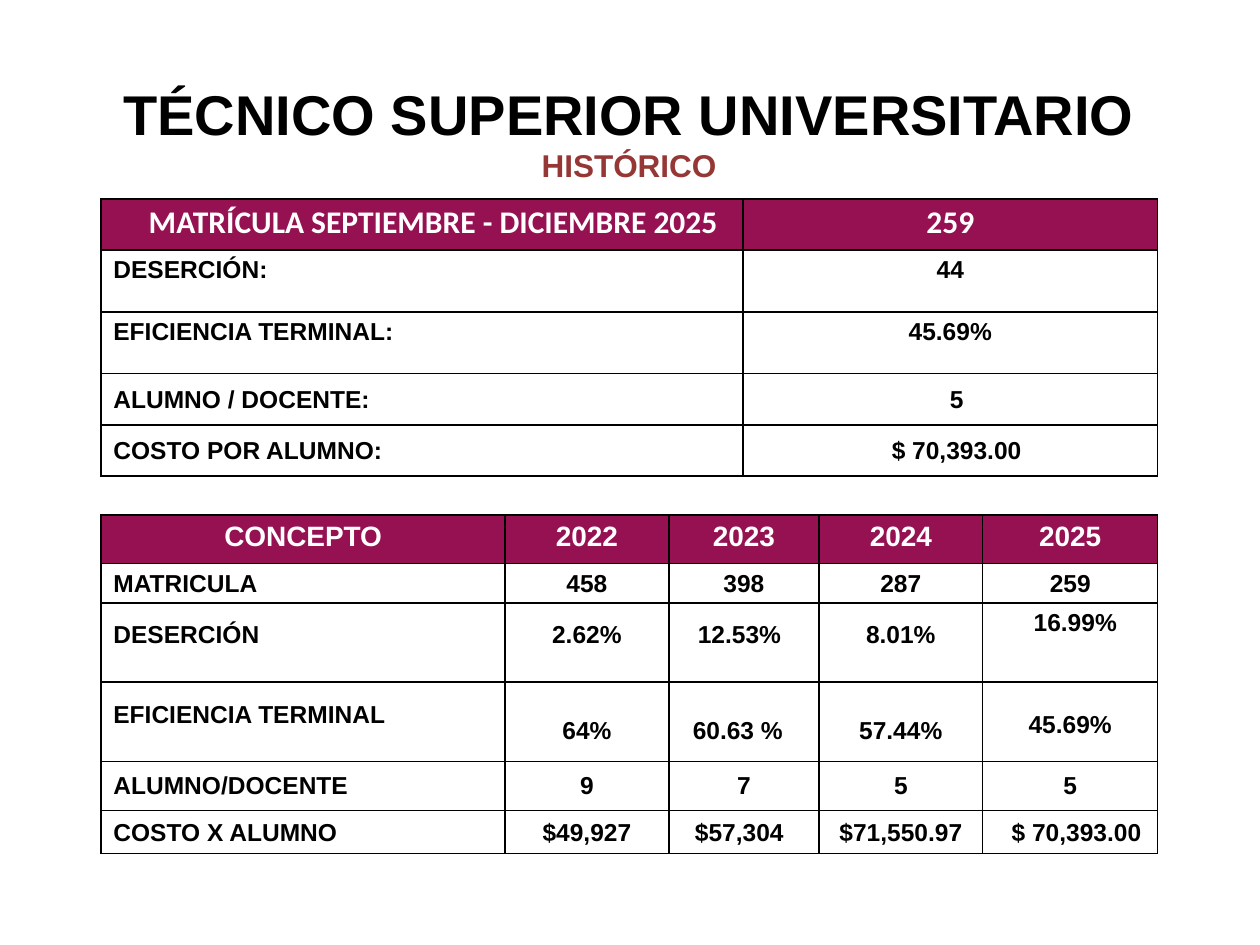
"""Build the slide with the history of the Técnico Superior Universitario indicators."""
from dataclasses import dataclass
from typing import Any

from lxml.etree import SubElement
from pptx import Presentation
from pptx.dml.color import RGBColor
from pptx.enum.text import MSO_ANCHOR as Anchor, MSO_AUTO_SIZE as AutoSize, PP_ALIGN as Align
from pptx.oxml.ns import qn
from pptx.util import Pt

BLACK = RGBColor(0x00, 0x00, 0x00)
WHITE = RGBColor(0xFF, 0xFF, 0xFF)
WINE = RGBColor(0x95, 0x11, 0x51)
BRICK = RGBColor(0x95, 0x37, 0x35)

SUMMARY = [
    ["MATRÍCULA SEPTIEMBRE - DICIEMBRE 2025", "259"],
    ["DESERCIÓN:", "44"],
    ["EFICIENCIA TERMINAL:", "45.69%"],
    ["ALUMNO / DOCENTE:", "5"],
    ["COSTO POR ALUMNO:", "$ 70,393.00"],
]
HISTORY = [
    ["CONCEPTO", "2022", "2023", "2024", "2025"],
    ["MATRICULA", "458", "398", "287", "259"],
    ["DESERCIÓN", "2.62%", "12.53%", "8.01%", "16.99%"],
    ["EFICIENCIA TERMINAL", "64%", "60.63 %", "57.44%", "45.69%"],
    ["ALUMNO/DOCENTE", "9", "7", "5", "5"],
    ["COSTO X ALUMNO", "$49,927", "$57,304", "$71,550.97", "$ 70,393.00"],
]


def write(para, text, size=14, color=BLACK, font="Arial", align=Align.CENTER, line=None):
    """Add bold text to a paragraph with the given format."""
    para.alignment = align
    if line:
        para.line_spacing = Pt(line)
    span = para.add_run()
    span.text = text
    span.font.size = Pt(size)
    span.font.bold = True
    span.font.name = font
    span.font.color.rgb = color


@dataclass
class SlideBuilder:
    """Hold the page and the shared table style."""
    page: Any
    header_fill: RGBColor = WINE
    border: RGBColor = BLACK
    border_width: float = 1
    label_indent: float = 7.2

    def title(self, left, top, width, height, lines):
        """Place the title and fill it with formatted lines."""
        box = self.page.shapes.title
        box.left, box.top, box.width, box.height = map(Pt, (left, top, width, height))
        frame = box.text_frame
        frame.word_wrap = True
        frame.auto_size = AutoSize.NONE
        frame.vertical_anchor = Anchor.TOP
        frame.margin_left = frame.margin_right = frame.margin_top = frame.margin_bottom = 0
        for index, (text, style) in enumerate(lines):
            para = frame.add_paragraph() if index else frame.paragraphs[0]
            para.space_before = Pt(0)
            write(para, text, **style)

    def outline(self, cell):
        """Draw the four borders of a cell."""
        properties = cell._tc.get_or_add_tcPr()
        for place, side in enumerate(("lnL", "lnR", "lnT", "lnB")):
            edge = SubElement(properties, qn(f"a:{side}"), w=str(Pt(self.border_width)))
            fill = SubElement(edge, qn("a:solidFill"))
            SubElement(fill, qn("a:srgbClr"), val=str(self.border))
            properties.insert(place, edge)

    def cell(self, cell, text, header, top, left=0, right=0, anchor=Anchor.TOP, **style):
        """Fill one table cell with text, padding and borders."""
        cell.margin_top, cell.margin_left, cell.margin_right = Pt(top), Pt(left), Pt(right)
        cell.margin_bottom = 0
        cell.vertical_anchor = anchor
        if header:
            cell.fill.solid()
            cell.fill.fore_color.rgb = self.header_fill
        else:
            cell.fill.background()
        self.outline(cell)
        write(cell.text_frame.paragraphs[0], text, color=WHITE if header else BLACK, **style)

    def table(self, left, top, widths, heights, rows, insets, header_style, special):
        """Add a table whose first row is a header and first column holds labels."""
        frame = self.page.shapes.add_table(
            len(rows), len(widths), Pt(left), Pt(top), Pt(sum(widths)), Pt(sum(heights)))
        grid = frame.table
        for column, width in zip(grid.columns, widths):
            column.width = Pt(width)
        for row, height in zip(grid.rows, heights):
            row.height = Pt(height)
        for r, texts in enumerate(rows):
            for c, text in enumerate(texts):
                options = {"top": insets[r]}
                if r == 0:
                    options |= header_style
                if c == 0:
                    options |= {"left": self.label_indent, "align": Align.LEFT}
                self.cell(grid.cell(r, c), text, r == 0, **(options | special.get((r, c), {})))


def main():
    """Build and save the deck."""
    deck = Presentation()
    deck.slide_width, deck.slide_height = Pt(720), Pt(540)
    builder = SlideBuilder(deck.slides.add_slide(deck.slide_layouts[5]))

    builder.title(29.5, 60, 660, 46.8, [
        ("TÉCNICO SUPERIOR UNIVERSITARIO", {"size": 32, "line": 23.8}),
        ("HISTÓRICO", {"size": 18, "color": BRICK, "line": 21.4}),
    ])

    shifted = {"left": 7.2}
    builder.table(
        57.6, 113.8, [367, 237], [29, 35.4, 35.4, 29.2, 29.2], SUMMARY,
        [2.6, 3.6, 3.6, 7.1, 7.1], {"size": 18, "font": "Calibri"},
        {(0, 0): {"left": 27.4}, (3, 1): shifted, (4, 1): shifted})

    middle = {"anchor": Anchor.MIDDLE}
    builder.table(
        57.6, 294.3, [231, 93.6, 85.8, 93.6, 100], [27.6, 22.8, 45.2, 45.2, 28, 24.6], HISTORY,
        [3.4, 3.9, 10.5, 10.8, 6.4, 4.9], {"size": 16},
        {(0, 0): {"left": 70.6},
         (2, 2): {"right": 21.6, "align": Align.RIGHT},
         (2, 4): {"top": 3.3, "left": 5.8},
         (3, 1): middle,
         (3, 2): middle | {"left": 13.7, "align": Align.LEFT},
         (3, 3): middle,
         (3, 4): middle | {"top": 3.3},
         (5, 2): {"right": 20.2, "align": Align.RIGHT},
         (5, 4): shifted})

    deck.save("out.pptx")


if __name__ == "__main__":
    main()
